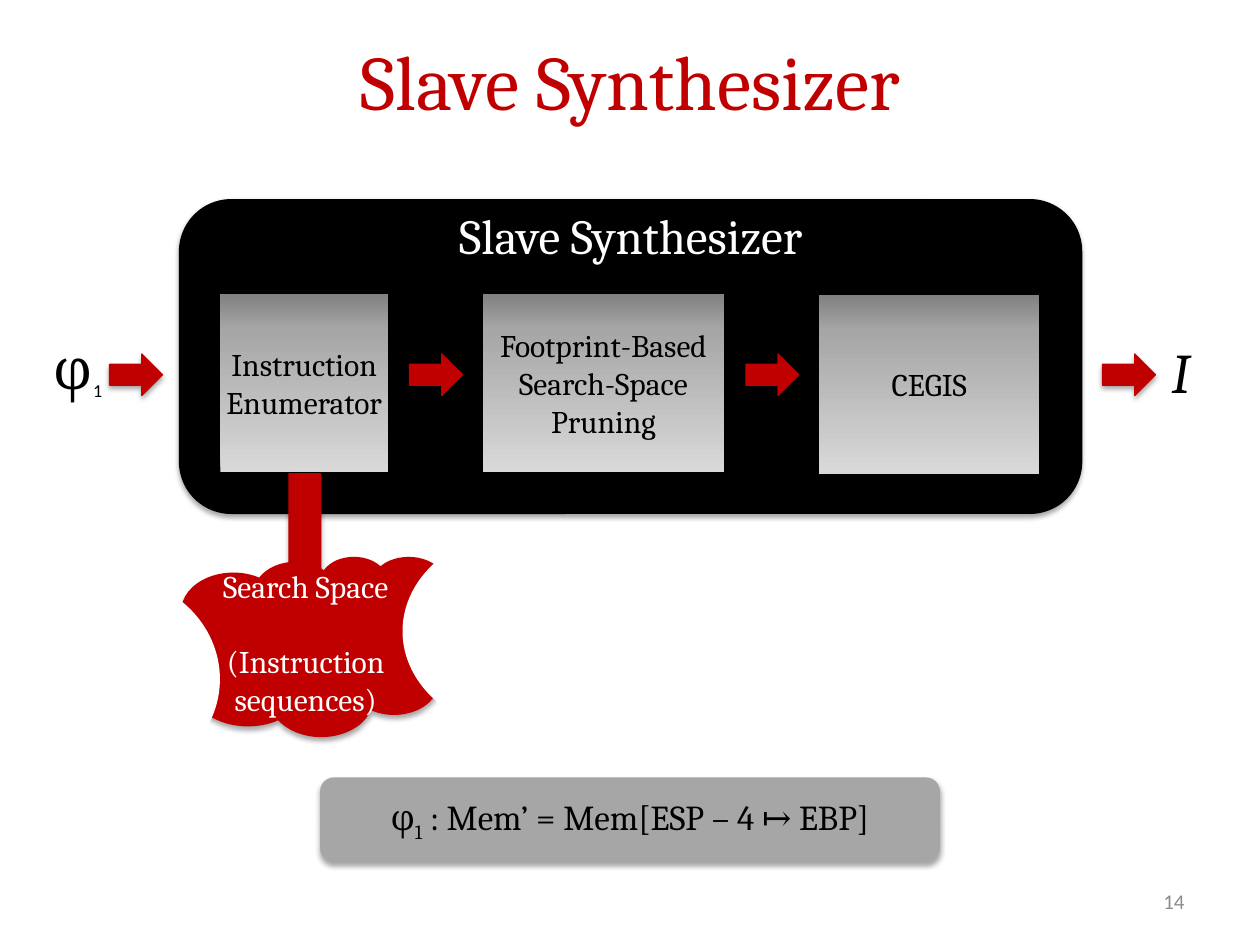
import lxml.etree
import pptx
import pptx.dml.color
import pptx.enum.shapes
import pptx.enum.text
import pptx.oxml
import pptx.oxml.ns
import pptx.util

Inches = pptx.util.Inches
Pt = pptx.util.Pt
Kind = pptx.enum.shapes.MSO_SHAPE
Align = pptx.enum.text.PP_ALIGN
Anchor = pptx.enum.text.MSO_ANCHOR

THEME = {
    "red": "C00000", "black": "000000", "white": "FFFFFF",
    "gray": "A6A6A6", "dim": "8C8C8C",
    "steel": ((0, "D9D9D9"), (0.8, "A6A6A6"), (1, "808080")),
    "serif": "Cambria", "sans": "Calibri",
    "title": 44, "sign": 32, "head": 28, "rule": 20, "body": 18, "page": 12,
}

PANEL = (1.42, 1.58, 7.17, 2.5)
STAGES = [
    ("Instruction Enumerator", 1.75, 2.33, 1.33),
    ("Footprint-Based Search-Space Pruning", 3.83, 2.33, 1.92),
    ("CEGIS", 6.5, 2.34, 1.75),
]
STAGE_H = 1.42
ARROWS = [0.87, 3.25, 5.92, 8.75]
ARROW_Y, ARROW_W, ARROW_H = 2.81, 0.42, 0.33
STEM = (2.17, 3.76, 0.5, 1.08)
CLOUD = (1.21, 4.42, 2.62, 1.42)
SPACE = "Search Space\n(Instruction sequences)"
MASKS = [(3.2, 4.2, 2, 1.62), (-0.01, 4.58, 1.75, 1.62)]
RULE = (2.54, 6.17, 4.92, 0.67)
RULE_RUNS = ["φ", "1", " : Mem’ = Mem[ESP – 4 ↦ EBP]"]
LABELS = [
    ("Slave Synthesizer", (0.17, 0.17, 9.67, 0.92), "title", "red", "serif", Align.CENTER, Anchor.MIDDLE, True),
    ("14", (7.17, 6.95, 2.33, 0.4), "page", "dim", "sans", Align.RIGHT, Anchor.MIDDLE, True),
    ("φ", (0.33, 2.6, 0.61, 0.64), "sign", "black", "serif", Align.LEFT, Anchor.TOP, False),
    ("I", (9.2, 2.63, 0.35, 0.64), "sign", "black", "serif", Align.LEFT, Anchor.TOP, False),
    ("Slave Synthesizer", (3.4, 1.58, 3.21, 0.57), "head", "white", "serif", Align.CENTER, Anchor.TOP, True),
]


def rgb(name):
    """Return the theme colour with this name."""
    return pptx.dml.color.RGBColor.from_string(THEME[name])


def style(run, size, color, face="serif"):
    """Set the font of a run."""
    run.font.name = THEME[face]
    run.font.size = Pt(THEME[size])
    run.font.color.rgb = rgb(color)


def lower(run):
    """Turn a run into a subscript."""
    run.font.size = run.font.size
    run._r.get_or_add_rPr().set("baseline", "-25000")


def shade(shape):
    """Give a shape the soft drop shadow."""
    shape.shadow.inherit = False
    glow = shape._element.spPr.find(pptx.oxml.ns.qn("a:effectLst"))
    glow.append(pptx.oxml.parse_xml(
        f'<a:outerShdw {pptx.oxml.ns.nsdecls("a")} blurRad="{Pt(3.1)}" dist="{Pt(1.8)}" '
        'dir="5400000" rotWithShape="0"><a:srgbClr val="000000">'
        '<a:alpha val="35000"/></a:srgbClr></a:outerShdw>'))


def blend(shape):
    """Fill a shape with the steel gradient, light at the bottom."""
    shape.fill.gradient()
    shape.fill.gradient_angle = 90
    stops = shape._element.spPr.find(".//" + pptx.oxml.ns.qn("a:gsLst"))
    lxml.etree.SubElement(stops, pptx.oxml.ns.qn("a:gs"), pos="100000")
    for stop, (pos, color) in zip(shape.fill.gradient_stops, THEME["steel"]):
        stop.position = pos
        stop.color.rgb = pptx.dml.color.RGBColor.from_string(color)


def draw(slide, kind, box, fill, line=False, soft=True):
    """Add a preset shape."""
    shape = slide.shapes.add_shape(kind, *map(Inches, box))
    if fill == "steel":
        blend(shape)
    else:
        shape.fill.solid()
        shape.fill.fore_color.rgb = rgb(fill)
    if line:
        shape.line.color.rgb = rgb(fill)
        shape.line.width = Pt(0.75)
    else:
        shape.line.fill.background()
    shape.shadow.inherit = False
    if soft:
        shade(shape)
    return shape


def write(shape, text, size, color, inset=True):
    """Put centred text in a shape."""
    frame = shape.text_frame
    frame.text = text
    frame.word_wrap = True
    frame.vertical_anchor = Anchor.MIDDLE
    if not inset:
        frame.margin_left = frame.margin_right = 0
        frame.margin_top = frame.margin_bottom = 0
    for para in frame.paragraphs:
        para.alignment = Align.CENTER
        for run in para.runs:
            style(run, size, color)
    return frame


def label(slide, text, box, size, color, face, align, anchor, wrap):
    """Add a text box and return its paragraph."""
    frame = slide.shapes.add_textbox(*map(Inches, box)).text_frame
    frame.text = text
    frame.word_wrap = wrap
    frame.vertical_anchor = anchor
    para = frame.paragraphs[0]
    para.alignment = align
    style(para.runs[0], size, color, face)
    return para


def main():
    """Build the slide and save it."""
    deck = pptx.Presentation()
    deck.slide_width, deck.slide_height = Inches(10), Inches(7.5)
    slide = deck.slides.add_slide(deck.slide_layouts[6])

    draw(slide, Kind.ROUNDED_RECTANGLE, PANEL, "black")
    for text, left, top, width in STAGES:
        stage = draw(slide, Kind.RECTANGLE, (left, top, width, STAGE_H), "steel")
        write(stage, text, "body", "black", inset=False)
    for left in ARROWS:
        draw(slide, Kind.RIGHT_ARROW, (left, ARROW_Y, ARROW_W, ARROW_H), "red", line=True)

    draw(slide, Kind.DOWN_ARROW, STEM, "red", line=True)
    cloud = draw(slide, Kind.CLOUD, CLOUD, "red", line=True)
    frame = write(cloud, SPACE, "body", "white")
    frame.paragraphs[1].space_before = Pt(21)
    for box in MASKS:
        draw(slide, Kind.OVAL, box, "white", line=True, soft=False)

    paras = [label(slide, *item) for item in LABELS]
    sub = paras[2].add_run()
    sub.text = "1"
    style(sub, "body", "black", "sans")
    lower(sub)
    paras[3].runs[0].font.italic = True

    rule = draw(slide, Kind.ROUNDED_RECTANGLE, RULE, "gray")
    para = write(rule, RULE_RUNS[0], "rule", "black", inset=False).paragraphs[0]
    for text in RULE_RUNS[1:]:
        run = para.add_run()
        run.text = text
        style(run, "rule", "black")
    lower(para.runs[1])

    deck.save("out.pptx")


if __name__ == "__main__":
    main()
